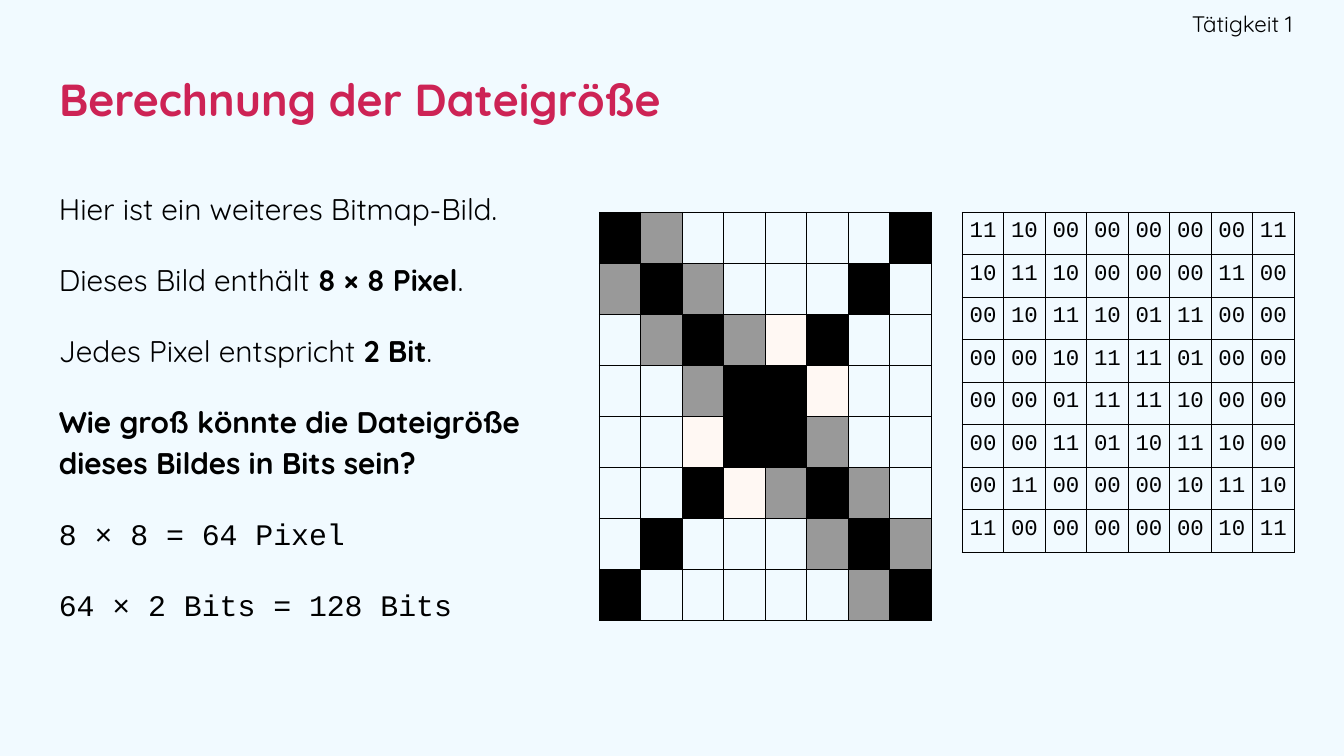
from lxml import etree
from pptx import Presentation, util as u
from pptx.dml.color import RGBColor
from pptx.enum import text
from pptx.oxml import ns

COLORS = {"page": "F1FAFF", "ink": "000000", "title": "CD2355", "gray": "999999", "cream": "FFF8F3"}
PIXEL_COLORS = {"11": "ink", "10": "gray", "01": "cream"}
WIDTH = 10
HEIGHT = WIDTH * 9 / 16
MARGIN, HEADER = 0.34, 0.35
SANS, MONO = "Quicksand", "Courier New"

TITLE = [[("Berechnung der Dateigröße", SANS, True)]]
ACTIVITY = [[("Tätigkeit 1", SANS, False)]]
EXPLANATION = [
    [("Hier ist ein weiteres Bitmap-Bild.", SANS, False)],
    [("Dieses Bild enthält ", SANS, False), ("8 × 8 Pixel", SANS, True), (".", SANS, False)],
    [("Jedes Pixel entspricht ", SANS, False), ("2 Bit", SANS, True), (".", SANS, False)],
    [("Wie groß könnte die Dateigröße dieses Bildes in Bits sein?", SANS, True)],
    [("8 × 8 = 64 Pixel", MONO, False)],
    [("64 × 2 Bits = 128 Bits", MONO, False)],
]
BITMAP = [row.split() for row in (
    "11 10 00 00 00 00 00 11",
    "10 11 10 00 00 00 11 00",
    "00 10 11 10 01 11 00 00",
    "00 00 10 11 11 01 00 00",
    "00 00 01 11 11 10 00 00",
    "00 00 11 01 10 11 10 00",
    "00 11 00 00 00 10 11 10",
    "11 00 00 00 00 00 10 11",
)]
GRID_TOP, GRID_WIDTH = 1.58, 2.47
PICTURE = {"left": 4.46, "height": 3.04, "inset": 0}
CODES = {"left": 7.16, "height": 2.53, "inset": 0.05}


def color(name):
    return RGBColor.from_string(COLORS[name])


def apply(target, **values):
    for name, value in values.items():
        setattr(target, name, value)


def write(frame, paragraphs, size, ink="ink", **layout):
    for index, spans in enumerate(paragraphs):
        para = frame.add_paragraph() if index else frame.paragraphs[0]
        apply(para, **layout)
        if index:
            para.space_before = u.Pt(16)
        for words, font, bold in spans:
            span = para.add_run()
            span.text = words
            apply(span.font, name=font, size=u.Pt(size), bold=bold)
            span.font.color.rgb = color(ink)


def place(box, left, top, width, height, anchor, right_inset=0.1):
    apply(box, left=u.Inches(left), top=u.Inches(top), width=u.Inches(width), height=u.Inches(height))
    inset = u.Inches(0.1)
    apply(box.text_frame, word_wrap=True, auto_size=text.MSO_AUTO_SIZE.NONE, vertical_anchor=anchor,
          margin_left=inset, margin_top=inset, margin_bottom=inset, margin_right=u.Inches(right_inset))
    return box.text_frame


def add_borders(cell):
    properties = cell._tc.get_or_add_tcPr()
    for side in ("lnL", "lnR", "lnT", "lnB"):
        line = etree.SubElement(properties, ns.qn(f"a:{side}"), w=str(u.Pt(0.75)))
        fill = etree.SubElement(line, ns.qn("a:solidFill"))
        etree.SubElement(fill, ns.qn("a:srgbClr"), val=COLORS["ink"])


def add_grid(page, left, height, inset):
    count = len(BITMAP)
    table = page.shapes.add_table(count, count, u.Inches(left), u.Inches(GRID_TOP),
                                  u.Inches(GRID_WIDTH), u.Inches(height)).table
    apply(table, first_row=False, horz_banding=False)
    margin = u.Inches(inset)
    for cell in table.iter_cells():
        apply(cell, margin_left=margin, margin_right=margin, margin_top=margin, margin_bottom=margin)
        add_borders(cell)
        cell.fill.background()
    return table


deck = Presentation()
apply(deck, slide_width=u.Inches(WIDTH), slide_height=u.Inches(HEIGHT))
page = deck.slides.add_slide(deck.slide_layouts[5])
page.background.fill.solid()
page.background.fill.fore_color.rgb = color("page")

middle, top = text.MSO_ANCHOR.MIDDLE, text.MSO_ANCHOR.TOP
left_aligned, right_aligned = text.PP_ALIGN.LEFT, text.PP_ALIGN.RIGHT
title = place(page.shapes.title, MARGIN, HEADER, WIDTH - 2 * MARGIN, 0.76, middle)
write(title, TITLE, 24, "title", alignment=left_aligned)
explanation = place(page.shapes.add_textbox(0, 0, 0, 0), MARGIN, 1.28, 3.9, 4, top)
write(explanation, EXPLANATION, 16, line_spacing=1.15)
activity = place(page.shapes.add_textbox(0, 0, 0, 0), 7.48, 0, 2.14, HEADER, middle, right_inset=0)
write(activity, ACTIVITY, 12, alignment=right_aligned)

picture, codes = add_grid(page, **PICTURE), add_grid(page, **CODES)
for row, values in enumerate(BITMAP):
    for column, bits in enumerate(values):
        write(codes.cell(row, column).text_frame, [[(bits, MONO, False)]], 12, alignment=text.PP_ALIGN.CENTER)
        if bits in PIXEL_COLORS:
            pixel = picture.cell(row, column).fill
            pixel.solid()
            pixel.fore_color.rgb = color(PIXEL_COLORS[bits])

deck.save("out.pptx")
